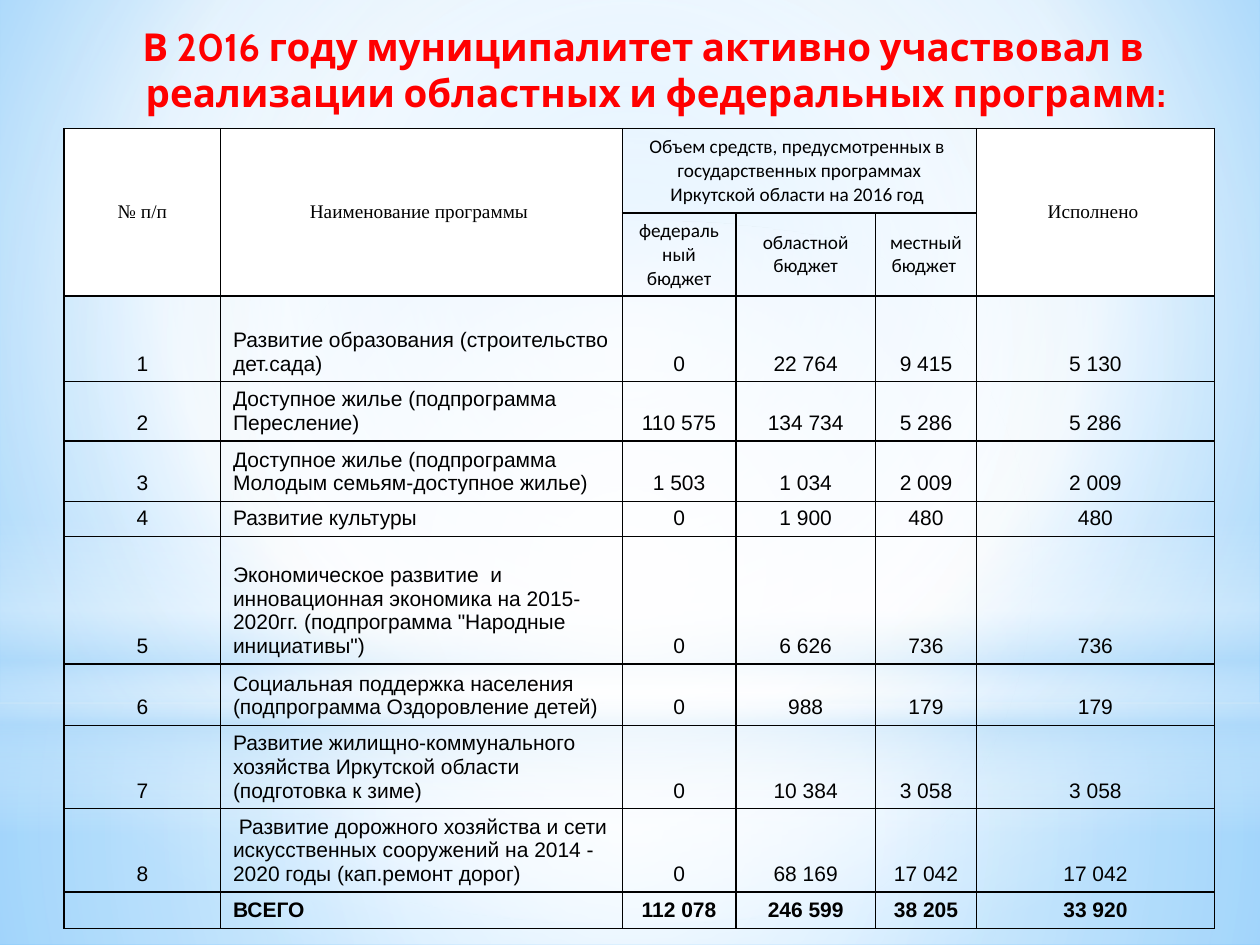
from dataclasses import dataclass

from lxml import etree
from pptx import Presentation
from pptx.dml.color import RGBColor
from pptx.enum.shapes import MSO_SHAPE
from pptx.enum.text import MSO_ANCHOR, PP_ALIGN
from pptx.oxml.ns import qn
from pptx.util import Inches, Pt

RECTANGLE, OVAL = MSO_SHAPE.RECTANGLE, MSO_SHAPE.OVAL
MIDDLE, BOTTOM = MSO_ANCHOR.MIDDLE, MSO_ANCHOR.BOTTOM
LEFT, CENTER = PP_ALIGN.LEFT, PP_ALIGN.CENTER


@dataclass(frozen=True)
class Theme:
    title_color: str = "FF0000"
    ink: str = "000000"
    paper: str = "FFFFFF"
    haze: str = "B4DCFA"
    sky_light: str = "9ED5FF"
    sky_deep: str = "5BB9FF"
    title_font: str = "Cabin"
    label_font: str = "Times New Roman"
    budget_font: str = "Calibri"
    body_font: str = "Arial"
    title_size: int = 22
    header_size: int = 11
    body_size: int = 12
    border: int = 1


THEME = Theme()
CENTRE_FOCUS = (50, 50, 50, 50)
TITLE = "В 2016 году муниципалитет активно участвовал в реализации областных и федеральных программ:"

# Table content: header as (row, column, last row, last column, text)
LABELS = [
    (0, 0, 1, 0, "№ п/п"),
    (0, 1, 1, 1, "Наименование программы "),
    (0, 5, 1, 5, "Исполнено "),
]
BUDGETS = [
    (0, 2, 0, 4, "Объем средств, предусмотренных в  государственных программах Иркутской области на 2016 год "),
    (1, 2, 1, 2, "федеральный бюджет"),
    (1, 3, 1, 3, "областной бюджет"),
    (1, 4, 1, 4, "местный бюджет "),
]
PROGRAMS = [
    ("1", "Развитие образования (строительство дет.сада)", "0", "22 764", "9 415", "5 130"),
    ("2", "Доступное жилье (подпрограмма Пересление)", "110 575", "134 734", "5 286", "5 286"),
    ("3", "Доступное жилье (подпрограмма Молодым семьям-доступное жилье)", "1 503", "1 034", "2 009", "2 009"),
    ("4", "Развитие культуры", "0", "1 900", "480", "480"),
    ("5", "Экономическое развитие  и инновационная экономика на 2015-2020гг. "
          "(подпрограмма \"Народные инициативы\")", "0", "6 626", "736", "736"),
    ("6", "Социальная поддержка населения (подпрограмма Оздоровление детей)", "0", "988", "179", "179"),
    ("7", "Развитие жилищно-коммунального хозяйства Иркутской области (подготовка к зиме)",
     "0", "10 384", "3 058", "3 058"),
    ("8", " Развитие дорожного хозяйства и сети искусственных сооружений на 2014 - 2020 годы "
          "(кап.ремонт дорог)", "0", "68 169", "17 042", "17 042"),
    ("", "ВСЕГО", "112 078", "246 599", "38 205", "33 920"),
]
COLUMN_WIDTHS = [1.24, 3.19, 0.9, 1.11, 0.8, 1.89]
ROW_HEIGHTS = [0.67, 0.66, 0.68, 0.47, 0.48, 0.28, 1.01, 0.49, 0.66, 0.66, 0.29]


def set_gradient(fill, properties, stops, focus=None):
    """Fill with (position, colour, opacity) stops, radial when a focus is given."""
    fill.background()
    gradient = etree.Element(qn("a:gradFill"), rotWithShape="1")
    stop_list = etree.SubElement(gradient, qn("a:gsLst"))
    for position, color, opacity in stops:
        stop = etree.SubElement(stop_list, qn("a:gs"), pos=str(position * 1000))
        rgb = etree.SubElement(stop, qn("a:srgbClr"), val=color)
        if opacity < 100:
            etree.SubElement(rgb, qn("a:alpha"), val=str(opacity * 1000))
    if focus:
        path = etree.SubElement(gradient, qn("a:path"), path="circle")
        sides = {side: str(value * 1000) for side, value in zip("ltrb", focus)}
        etree.SubElement(path, qn("a:fillToRect"), **sides)
    else:
        etree.SubElement(gradient, qn("a:lin"), ang="5400000", scaled="0")
    properties.replace(properties.find(qn("a:noFill")), gradient)


def style_run(run, font, size, color, bold=False):
    run.font.name = font
    run.font.size = Pt(size)
    run.font.bold = bold
    run.font.color.rgb = RGBColor.from_string(color)


def add_backdrop(slide):
    paper, haze = THEME.paper, THEME.haze
    set_gradient(
        slide.background.fill, slide.background._cSld.find(".//" + qn("p:bgPr")),
        [(0, THEME.sky_light, 100), (60, paper, 100), (100, THEME.sky_deep, 100)],
        (20, 10, 20, 60))
    layers = [
        (RECTANGLE, 5.58, 1.92, [(0, paper, 91), (37, paper, 76), (100, haze, 79)], CENTRE_FOCUS),
        (RECTANGLE, 0, 5.58, [(0, paper, 89), (48, paper, 62), (100, haze, 79)], CENTRE_FOCUS),
        (RECTANGLE, 4.12, 2.5, [(0, paper, 0), (29, paper, 30), (45, haze, 40),
                                (55, paper, 26), (65, haze, 60), (100, paper, 0)], None),
        (OVAL, 1.75, 5.58, [(0, paper, 100), (56, paper, 0)], CENTRE_FOCUS),
    ]
    for kind, top, height, stops, focus in layers:
        shape = slide.shapes.add_shape(kind, 0, Inches(top), Inches(10), Inches(height))
        shape.shadow.inherit = False
        shape.line.fill.background()
        set_gradient(shape.fill, shape._element.spPr, stops, focus)


def add_title(slide, left, top, width, height):
    box = slide.shapes.add_textbox(Inches(left), Inches(top), Inches(width), Inches(height))
    box.text_frame.word_wrap = True
    box.text_frame.text = TITLE
    paragraph = box.text_frame.paragraphs[0]
    paragraph.alignment = CENTER
    paragraph.space_before, paragraph.space_after = Pt(4.4), Pt(3)
    indents = paragraph._p.get_or_add_pPr()
    indents.set("marL", str(Inches(0.25)))
    indents.set("indent", str(Inches(-0.2)))
    style_run(paragraph.runs[0], THEME.title_font, THEME.title_size, THEME.title_color, True)


def set_borders(cell):
    properties = cell._tc.get_or_add_tcPr()
    for index, side in enumerate(("lnL", "lnR", "lnT", "lnB")):
        line = etree.Element(qn("a:" + side), w=str(Pt(THEME.border)))
        fill = etree.SubElement(line, qn("a:solidFill"))
        etree.SubElement(fill, qn("a:srgbClr"), val=THEME.ink)
        properties.insert(index, line)


def write_cell(cell, text, font, size, anchor, alignment=CENTER, bold=False):
    cell.text_frame.text = text
    cell.vertical_anchor = anchor
    if anchor == BOTTOM:  # lets the fixed row heights hold the wrapped lines
        cell.margin_top = 0
    paragraph = cell.text_frame.paragraphs[0]
    paragraph.alignment = alignment
    for run in paragraph.runs:
        style_run(run, font, size, THEME.ink, bold)
    if not text:  # keeps an empty cell from stretching its row
        etree.SubElement(paragraph._p, qn("a:endParaRPr"), sz=str(size * 100))


def add_program_table(slide, left, top, width, height):
    frame = slide.shapes.add_table(len(ROW_HEIGHTS), len(COLUMN_WIDTHS),
                                   Inches(left), Inches(top), Inches(width), Inches(height))
    table = frame.table
    table.first_row = table.horz_banding = False
    for column, column_width in zip(table.columns, COLUMN_WIDTHS):
        column.width = Inches(column_width)
    for row, row_height in zip(table.rows, ROW_HEIGHTS):
        row.height = Inches(row_height)
    for cell in table.iter_cells():
        cell.fill.background()
        set_borders(cell)

    # Header
    for group, font in ((LABELS, THEME.label_font), (BUDGETS, THEME.budget_font)):
        for row, column, last_row, last_column, text in group:
            cell = table.cell(row, column)
            if (row, column) != (last_row, last_column):
                cell.merge(table.cell(last_row, last_column))
            write_cell(cell, text, font, THEME.header_size, MIDDLE)
            if group is LABELS:
                cell.fill.solid()
                cell.fill.fore_color.rgb = RGBColor.from_string(THEME.paper)

    # Programs and total
    for row, values in enumerate(PROGRAMS, start=2):
        for column, text in enumerate(values):
            write_cell(table.cell(row, column), text, THEME.body_font, THEME.body_size, BOTTOM,
                       LEFT if column == 1 else CENTER, bold=values is PROGRAMS[-1])


def main():
    presentation = Presentation()
    presentation.slide_width, presentation.slide_height = Inches(10), Inches(7.5)
    slide = presentation.slides.add_slide(presentation.slide_layouts[6])
    add_backdrop(slide)
    add_title(slide, 0.67, 0.13, 8.82, 6.77)
    add_program_table(slide, 0.51, 1.02, sum(COLUMN_WIDTHS), sum(ROW_HEIGHTS))
    presentation.save("out.pptx")


if __name__ == "__main__":
    main()
